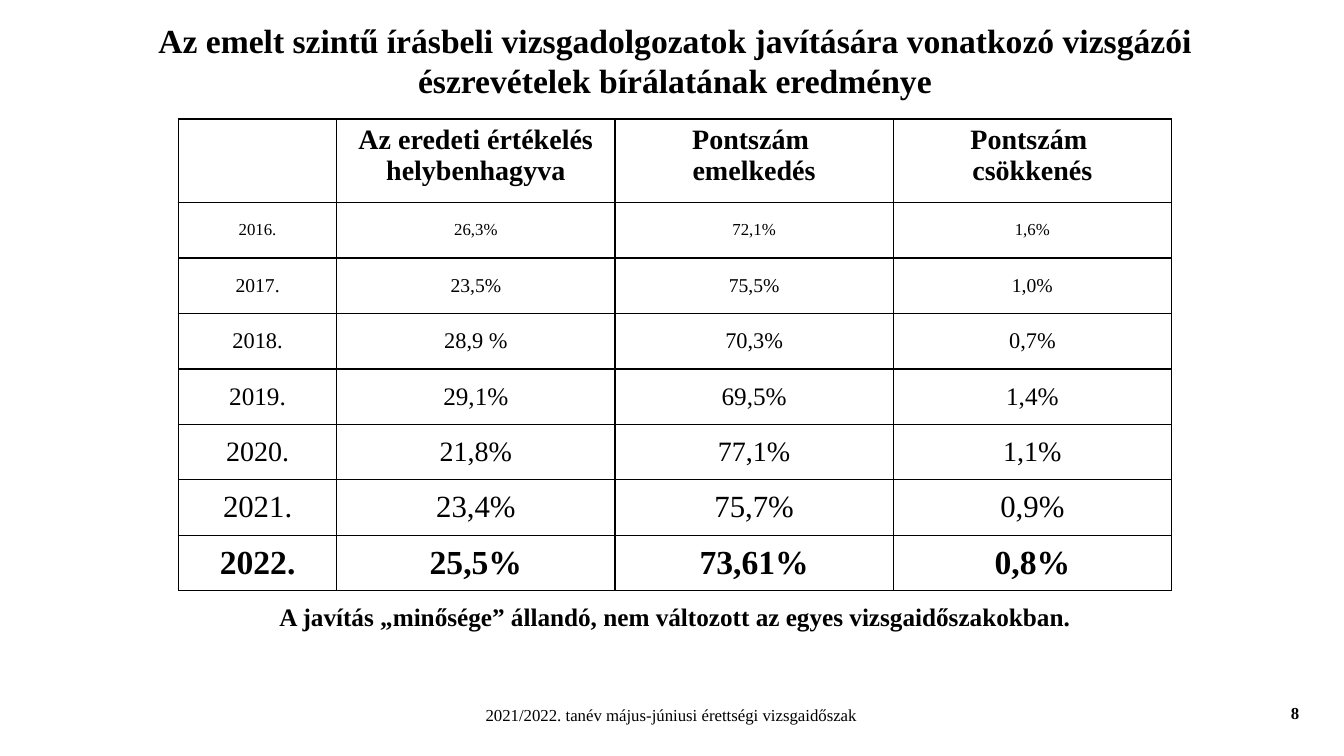
import pptx
import pptx.dml.color
import pptx.enum.text
import pptx.oxml
import pptx.util
from pptx.util import Inches

ALIGN = pptx.enum.text.PP_ALIGN
ANCHOR = pptx.enum.text.MSO_ANCHOR
NS = "http://schemas.openxmlformats.org/drawingml/2006/main"


def style(p, size, bold=False, color="000000", align=ALIGN.CENTER):
    p.alignment = align
    p.font.name = "Times New Roman"
    p.font.size = pptx.util.Pt(size)
    p.font.bold = bold
    p.font.color.rgb = pptx.dml.color.RGBColor.from_string(color)


def add_text(s, text, left, top, width, height, size, bold=False, wrap=True):
    box = s.shapes.add_textbox(Inches(left), Inches(top), Inches(width), Inches(height))
    tf = box.text_frame
    tf.word_wrap = wrap
    p = tf.paragraphs[0]
    p.text = text
    style(p, size, bold)
    return tf


prs = pptx.Presentation()
prs.slide_width = Inches(13.33)
prs.slide_height = Inches(7.5)
s = prs.slides.add_slide(prs.slide_layouts[6])

# Footer and slide number
add_text(s, "2021/2022. tanév május-júniusi érettségi vizsgaidőszak", 3.59, 6.94, 6.14, 0.3, 12)
add_text(s, "8", 12.7, 6.92, 0.29, 0.3, 12, True, wrap=False)

# Title
title = add_text(s, "Az emelt szintű írásbeli vizsgadolgozatok javítására vonatkozó "
                 "vizsgázói észrevételek bírálatának eredménye",
                 0.79, 0.2, 11.81, 0.79, 24, True)
title.vertical_anchor = ANCHOR.MIDDLE

# Conclusion
conclusion = add_text(s, "A javítás „minősége” állandó, nem változott az egyes vizsgaidőszakokban.",
                      0.79, 5.95, 11.81, 0.59, 18, True)
conclusion.paragraphs[0].line_spacing = 0.9

# Results table: the text grows from 12 to 24 pt towards the latest year
header = ["", "Az eredeti értékelés helybenhagyva", "Pontszám \vemelkedés", "Pontszám \vcsökkenés"]
results = [
    ["2016.", "26,3%", "72,1%", "1,6%"],
    ["2017.", "23,5%", "75,5%", "1,0%"],
    ["2018.", "28,9 %", "70,3%", "0,7%"],
    ["2019.", "29,1%", "69,5%", "1,4%"],
    ["2020.", "21,8%", "77,1%", "1,1%"],
    ["2021.", "23,4%", "75,7%", "0,9%"],
    ["2022.", "25,5%", "73,61%", "0,8%"],
]
rows = [header] + results
table = s.shapes.add_table(len(rows), len(header), Inches(1.77), Inches(1.18),
                           Inches(9.84), Inches(4.69)).table
table.first_row = False
table.horz_banding = False
for i, column in enumerate(table.columns):
    column.width = Inches(1.57 if i == 0 else 2.76)

for i, values in enumerate(rows):
    table.rows[i].height = Inches(0.83 if i == 0 else 0.55)
    size = 20 if i == 0 else 10 + 2 * i
    for j, value in enumerate(values):
        cell = table.cell(i, j)
        cell.vertical_anchor = ANCHOR.TOP if i == 0 else ANCHOR.MIDDLE
        p = cell.text_frame.paragraphs[0]
        p.text = value
        style(p, size, bold=i in (0, len(results)))
        # Borders come before the fill in the cell properties
        tcPr = cell._tc.get_or_add_tcPr()
        for side in ("lnL", "lnR", "lnT", "lnB"):
            tcPr.append(pptx.oxml.parse_xml(
                f'<a:{side} xmlns:a="{NS}" w="12700"><a:solidFill>'
                f'<a:srgbClr val="000000"/></a:solidFill></a:{side}>'))
        cell.fill.background()

prs.save("out.pptx")
